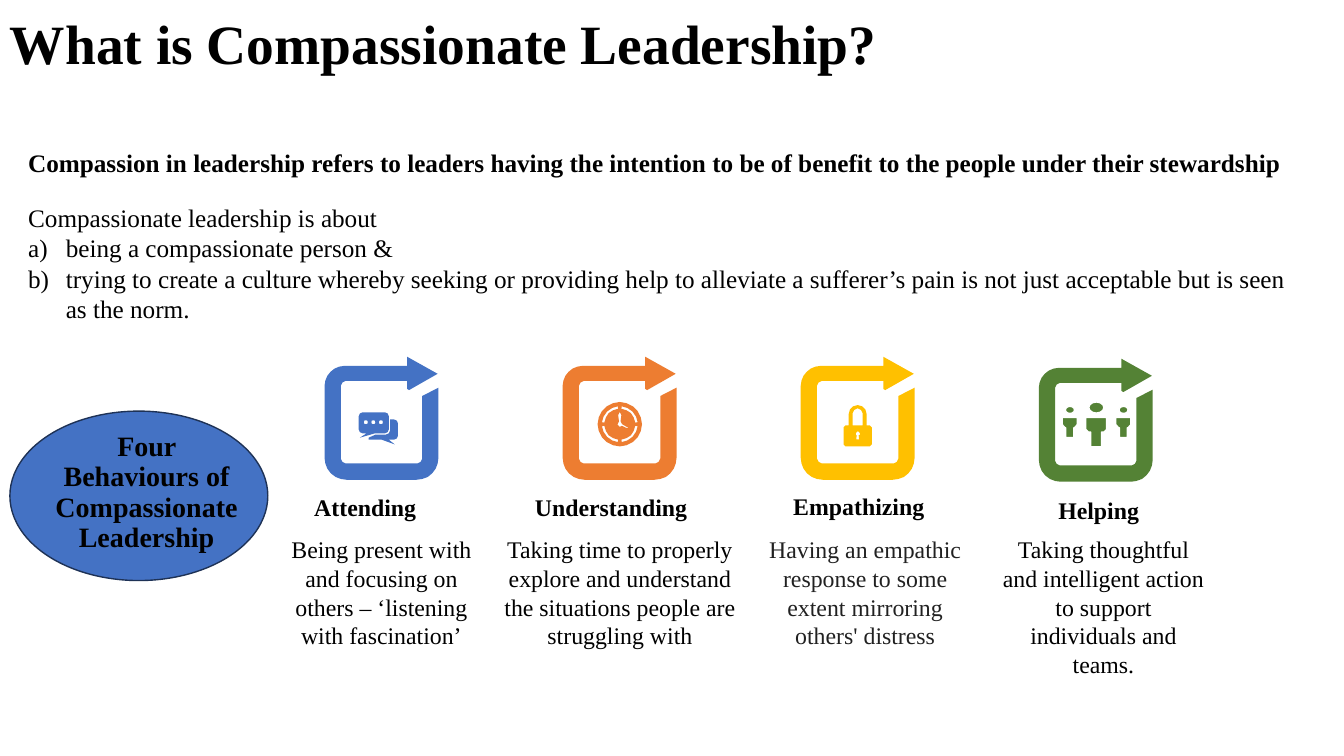
import math

import lxml.etree
import pptx
import pptx.dml.color
import pptx.enum.shapes
import pptx.enum.text
import pptx.oxml.ns
import pptx.util

Cm = pptx.util.Cm
Pt = pptx.util.Pt
FONT = "Times New Roman"
BLACK = "000000"
WHITE = "FFFFFF"
BLUE = "4472C4"
CENTER = pptx.enum.text.PP_ALIGN.CENTER
OVAL = pptx.enum.shapes.MSO_SHAPE.OVAL

FRAME = [(285, 43), (213, 84), (208, 81), (208, 61), (41, 61, 12), (41, 269, 12),
         (246, 269, 12), (246, 99), (287, 78), (287, 310, 55), (0, 310, 55),
         (0, 23, 50), (208, 23), (208, 0)]
FRONT = [(0, 0, 10), (76, 0, 10), (76, 53, 10), (41, 53), (3, 64), (20, 53), (0, 53, 10)]
BACK = [(79, 18), (99, 18, 10), (99, 69, 10), (76, 69), (91, 81), (58, 69),
        (25, 69), (25, 64), (43, 56), (79, 56, 10)]
LOCK = [(0, 51, 5), (71, 51, 5), (71, 104, 5), (0, 104, 5)]
LOOP = [(13, 51), (13, 0, 22), (58, 0, 22), (58, 51), (48, 51), (48, 8, 12),
        (23, 8, 12), (23, 51)]
KEY = [(31, 66, 4), (41, 66, 4), (41, 75), (38, 76), (39, 86), (32, 86),
       (33, 76), (31, 75)]
HANDS = [(56, 25), (60, 33), (58, 49), (62, 56), (79, 66), (74, 66),
         (61, 60), (56, 63), (50, 57), (54, 49), (52, 33)]


def color(code):
    return pptx.dml.color.RGBColor.from_string(code)


def paint(shape, fill, line=None):
    shape.shadow.inherit = False
    shape.fill.solid()
    shape.fill.fore_color.rgb = color(fill)
    if line:
        shape.line.color.rgb = color(line)
        shape.line.width = Pt(1)
    else:
        shape.line.fill.background()


def toward(start, end, size):
    part = size / math.dist(start, end)
    return tuple(a + (b - a) * part for a, b in zip(start, end))


def bend(corners):
    points = []
    for i, (x, y, *size) in enumerate(corners):
        if not size:
            points.append((x, y))
            continue
        spot = (x, y)
        first = toward(spot, corners[i - 1][:2], size[0])
        last = toward(spot, corners[(i + 1) % len(corners)][:2], size[0])
        steps = 1 + size[0] // 10
        for step in range(steps + 1):
            angle = math.pi / 2 * step / steps
            a, b = 1 - math.sin(angle), 1 - math.cos(angle)
            points.append(tuple(p + a * (f - p) + b * (l - p)
                                for p, f, l in zip(spot, first, last)))
    return points


def arc(x, y, size, steps, start=0, end=360):
    turns = [math.radians(start + (end - start) * i / steps) for i in range(steps + 1)]
    return [(x + size * math.cos(turn), y + size * math.sin(turn)) for turn in turns]


def draw(slide, left, top, loops, fill, line=None):
    form = slide.shapes.build_freeform(*loops[0][0], scale=Cm(0.01))
    for i, loop in enumerate(loops):
        if i:
            form.move_to(*loop[0])
        form.add_line_segments(loop[1:], close=True)
    paint(form.convert_to_shape(Cm(left), Cm(top)), fill, line)


def oval(slide, left, top, width, height, fill, line):
    shape = slide.shapes.add_shape(OVAL, Cm(left), Cm(top), Cm(width), Cm(height))
    paint(shape, fill, line)


def chat(slide, fill):
    dots = [arc(x, 25, 5, 8) for x in (18, 37, 56)]
    draw(slide, 9.04, 10.39, [bend(FRONT), bend(BACK)] + dots, fill)


def clock(slide, fill):
    slots = [arc(56, 56, 45, 4, turn + 6, turn + 84) + arc(56, 56, 39, 4, turn + 84, turn + 6)
             for turn in range(0, 360, 90)]
    draw(slide, 15.06, 10.13, [arc(56, 56, 56, 20), HANDS] + slots, fill)


def lock(slide, fill):
    draw(slide, 21.26, 10.21, [bend(LOCK), bend(LOOP), bend(KEY)], fill)


def team(slide, fill):
    small = (0.08, 10.24, 0.23, 0.18)
    big = (0.08, 10.13, 0.38, 0.28)
    for left, width, height, head in ((26.77, 38, 51, small), (28.12, 38, 51, small),
                                      (27.36, 53, 74, big)):
        inset, waist = width * 0.24, height / 2
        body = [(0, 0), (width, 0), (width, waist, 7), (width - inset, waist),
                (width - inset, height), (inset, height), (inset, waist), (0, waist, 7)]
        draw(slide, left, 10.52, [bend(body)], fill, WHITE)
        oval(slide, left + head[0], *head[1:], fill, WHITE)


def write(slide, left, top, width, height, lines, size, bold=False, align=None,
          space=None, ink=BLACK):
    frame = slide.shapes.add_textbox(Cm(left), Cm(top), Cm(width), Cm(height)).text_frame
    frame.word_wrap = True
    frame.text = "\n".join(lines)
    for para in frame.paragraphs:
        para.alignment = align
        para.line_spacing = space
        font = para.runs[0].font
        font.name, font.size, font.bold = FONT, Pt(size), bold
        font.color.rgb = color(ink)
    return frame


def letter(para):
    props = para._p.get_or_add_pPr()
    props.set("marL", str(Cm(0.95)))
    props.set("indent", str(-Cm(0.95)))
    mark = lxml.etree.SubElement(props, pptx.oxml.ns.qn("a:buAutoNum"))
    mark.set("type", "alphaLcParenR")


def main():
    deck = pptx.Presentation()
    deck.slide_width, deck.slide_height = Cm(33.87), Cm(19.05)
    slide = deck.slides.add_slide(deck.slide_layouts[6])

    title = write(slide, 0, 0.48, 31.93, 1.5, ["What is Compassionate Leadership?"],
                  39.6, True, space=0.7)
    title.vertical_anchor = pptx.enum.text.MSO_ANCHOR.BOTTOM
    write(slide, 0.46, 3.68, 32.66, 0.91,
          ["Compassion in leadership refers to leaders having the intention to be of "
           "benefit to the people under their stewardship"], 18, True, space=0.9)
    about = write(slide, 0.46, 4.98, 32.49, 3.33, [
        "Compassionate leadership is about",
        "being a compassionate person &",
        "trying to create a culture whereby seeking or providing help to alleviate a "
        "sufferer’s pain is not just acceptable but is seen as the norm."], 18)
    for para in about.paragraphs[1:]:
        letter(para)

    oval(slide, 0.25, 10.36, 6.5, 4.27, BLUE, "1E3256")
    write(slide, 1.09, 10.77, 5.21, 3.33, ["Four Behaviours of Compassionate Leadership"],
          20, True, CENTER, 0.9)

    cards = [
        (chat, BLUE, 8.99, "Attending", 7.67, 12.29, 6.81, 5.61, BLACK,
         "Being present with and focusing on others – ‘listening with fascination’"),
        (clock, "ED7D31", 8.99, "Understanding", 13.23, 12.29, 12.4, 6.45, BLACK,
         "Taking time to properly explore and understand the situations people are "
         "struggling with"),
        (lock, "FFC000", 8.99, "Empathizing", 19.74, 12.27, 19, 5.61, "212121",
         "Having an empathic response to some extent mirroring others' distress"),
        (team, "548235", 9.04, "Helping", 26.42, 12.37, 24.94, 5.74, BLACK,
         "Taking thoughtful and intelligent action to support individuals and teams."),
    ]
    for i, (icon, fill, top, name, left, high, side, width, ink, text) in enumerate(cards):
        draw(slide, 8.18 + 6 * i, top, [bend(FRAME)], fill)
        icon(slide, fill)
        write(slide, left, high, 5.6, 0.99, [name], 17, True)
        write(slide, side, 13.36, width, 3.18, [text], 17, align=CENTER, ink=ink)

    deck.save("out.pptx")


if __name__ == "__main__":
    main()
